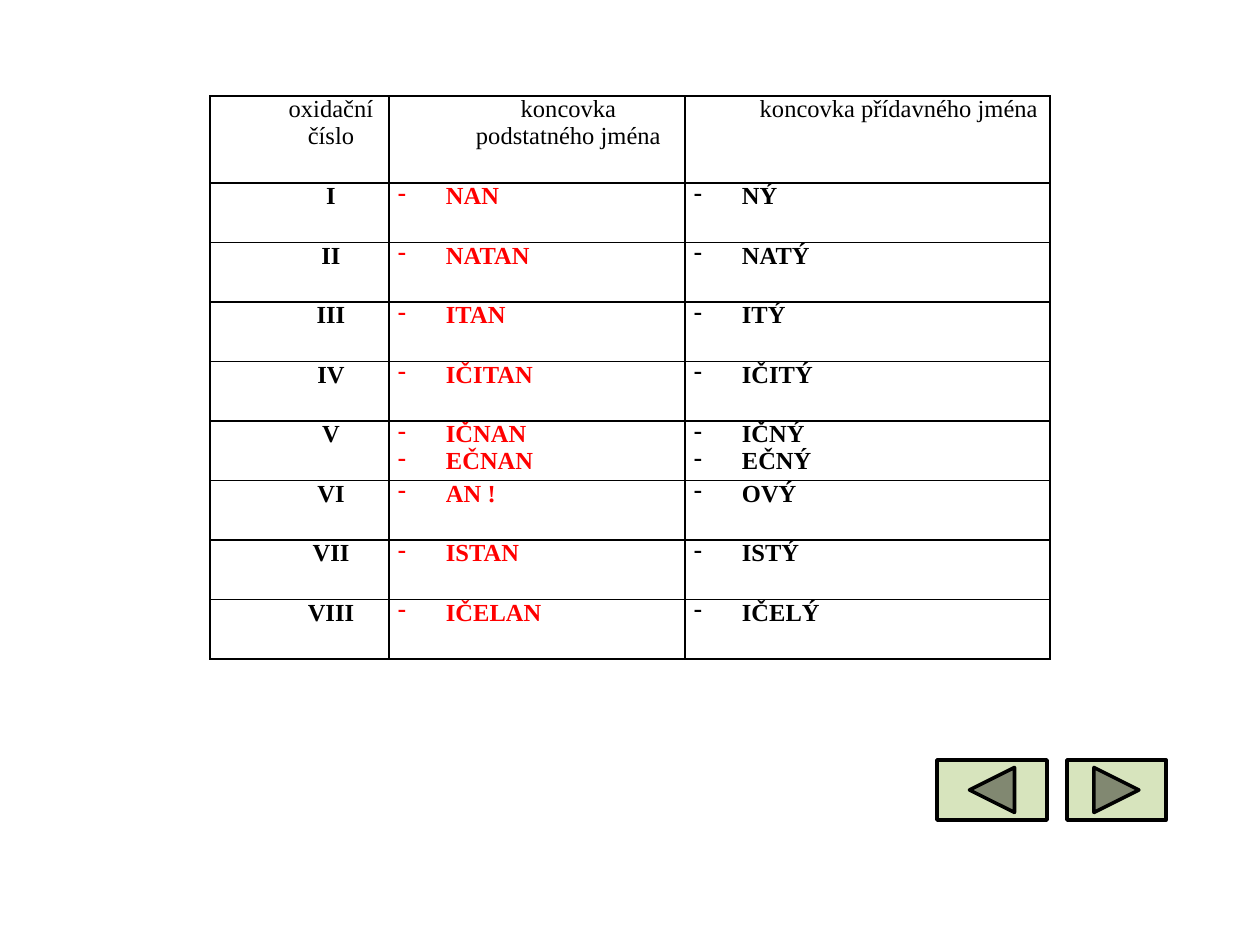
"""Build a slide with a table of oxidation-number suffixes and two navigation buttons."""
import pptx
import pptx.dml.color
import pptx.enum.shapes
import pptx.enum.text
import pptx.oxml.ns
import pptx.util
from lxml import etree

EMU_PER_PX = 914400 / 126
COLORS = {"ink": "000000", "accent": "FF0000", "button": "D7E4BD"}
HEADERS = ["oxidační číslo", "koncovka podstatného jména", "koncovka přídavného jména"]
SUFFIXES = [
    ("I", ["NAN"], ["NÝ"]),
    ("II", ["NATAN"], ["NATÝ"]),
    ("III", ["ITAN"], ["ITÝ"]),
    ("IV", ["IČITAN"], ["IČITÝ"]),
    ("V", ["IČNAN", "EČNAN"], ["IČNÝ", "EČNÝ"]),
    ("VI", ["AN !"], ["OVÝ"]),
    ("VII", ["ISTAN"], ["ISTÝ"]),
    ("VIII", ["IČELAN"], ["IČELÝ"]),
]


def px(n):
    return pptx.util.Emu(round(n * EMU_PER_PX))


def rgb(name):
    return pptx.dml.color.RGBColor.from_string(COLORS[name])


def add_xml(parent, tag, **attrs):
    return etree.SubElement(parent, pptx.oxml.ns.qn(tag), attrs)


class SlideBuilder:
    font = "Times New Roman"
    size = 14

    def __init__(self, prs):
        self.s = prs.slides.add_slide(prs.slide_layouts[6])

    def paragraph(self, p, text, color="ink", bold=False, bullet=False):
        pPr = p._p.get_or_add_pPr()
        pPr.set("marL", str(px(48 if bullet else 63)))
        pPr.set("indent", str(-px(48) if bullet else 0))
        if bullet:
            add_xml(pPr, "a:buFontTx")
            add_xml(pPr, "a:buChar", char="-")
        else:
            p.alignment = pptx.enum.text.PP_ALIGN.CENTER
        r = p.add_run()
        r.text = text
        r.font.name = self.font
        r.font.size = pptx.util.Pt(self.size)
        r.font.bold = bold
        r.font.color.rgb = rgb(color)

    def cell(self, cell, lines, **style):
        cell.margin_left = cell.margin_right = px(9)
        cell.margin_top = cell.margin_bottom = 0
        tcPr = cell._tc.get_or_add_tcPr()
        for side in "LRTB":
            ln = add_xml(tcPr, f"a:ln{side}", w=str(pptx.util.Pt(1)))
            add_xml(add_xml(ln, "a:solidFill"), "a:srgbClr", val=COLORS["ink"])
        cell.fill.background()
        tf = cell.text_frame
        for i, line in enumerate(lines):
            p = tf.add_paragraph() if i else tf.paragraphs[0]
            self.paragraph(p, line, **style)

    def table(self, x, y, widths, header_h, row_h):
        height = header_h + row_h * len(SUFFIXES)
        table = self.s.shapes.add_table(
            len(SUFFIXES) + 1, len(widths), px(x), px(y), px(sum(widths)), px(height)
        ).table
        table.first_row = table.horz_banding = False
        for column, width in zip(table.columns, widths):
            column.width = px(width)
        for i, row in enumerate(table.rows):
            row.height = px(row_h if i else header_h)
        for c, header in enumerate(HEADERS):
            self.cell(table.cell(0, c), [header])
        for r, (number, nouns, adjectives) in enumerate(SUFFIXES, 1):
            self.cell(table.cell(r, 0), [number], bold=True)
            self.cell(table.cell(r, 1), nouns, color="accent", bold=True, bullet=True)
            self.cell(table.cell(r, 2), adjectives, bold=True, bullet=True)

    def button(self, kind, x, y, w, h):
        sp = self.s.shapes.add_shape(kind, px(x), px(y), px(w), px(h))
        sp.shadow.inherit = False
        sp.fill.solid()
        sp.fill.fore_color.rgb = rgb("button")
        sp.line.color.rgb = rgb("ink")
        sp.line.width = pptx.util.Pt(2)


def main():
    prs = pptx.Presentation()
    prs.slide_width, prs.slide_height = px(1260), px(945)
    slide = SlideBuilder(prs)
    slide.table(210, 96, [179, 296, 365], header_h=87, row_h=59.5)
    shapes = pptx.enum.shapes.MSO_SHAPE
    slide.button(shapes.ACTION_BUTTON_FORWARD_OR_NEXT, 1067, 760, 99, 60)
    slide.button(shapes.ACTION_BUTTON_BACK_OR_PREVIOUS, 937, 760, 110, 60)
    prs.save("out.pptx")


if __name__ == "__main__":
    main()
